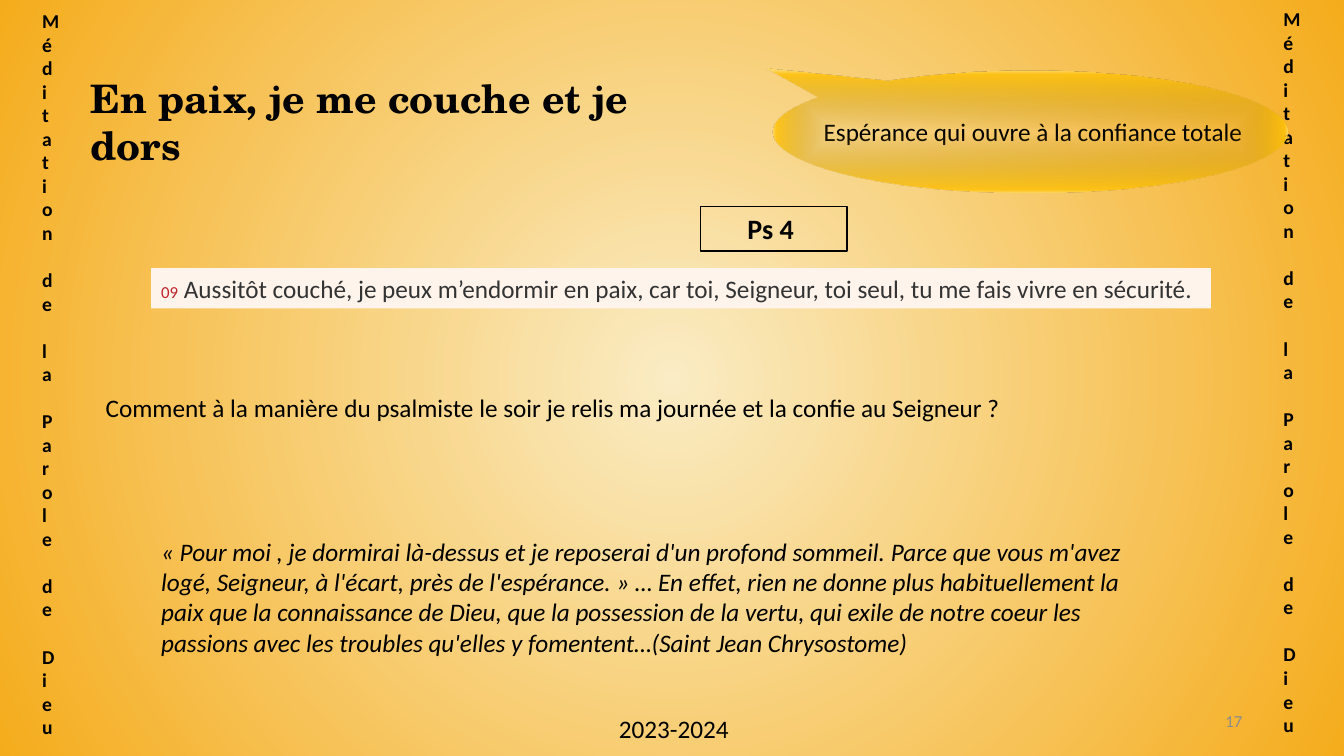
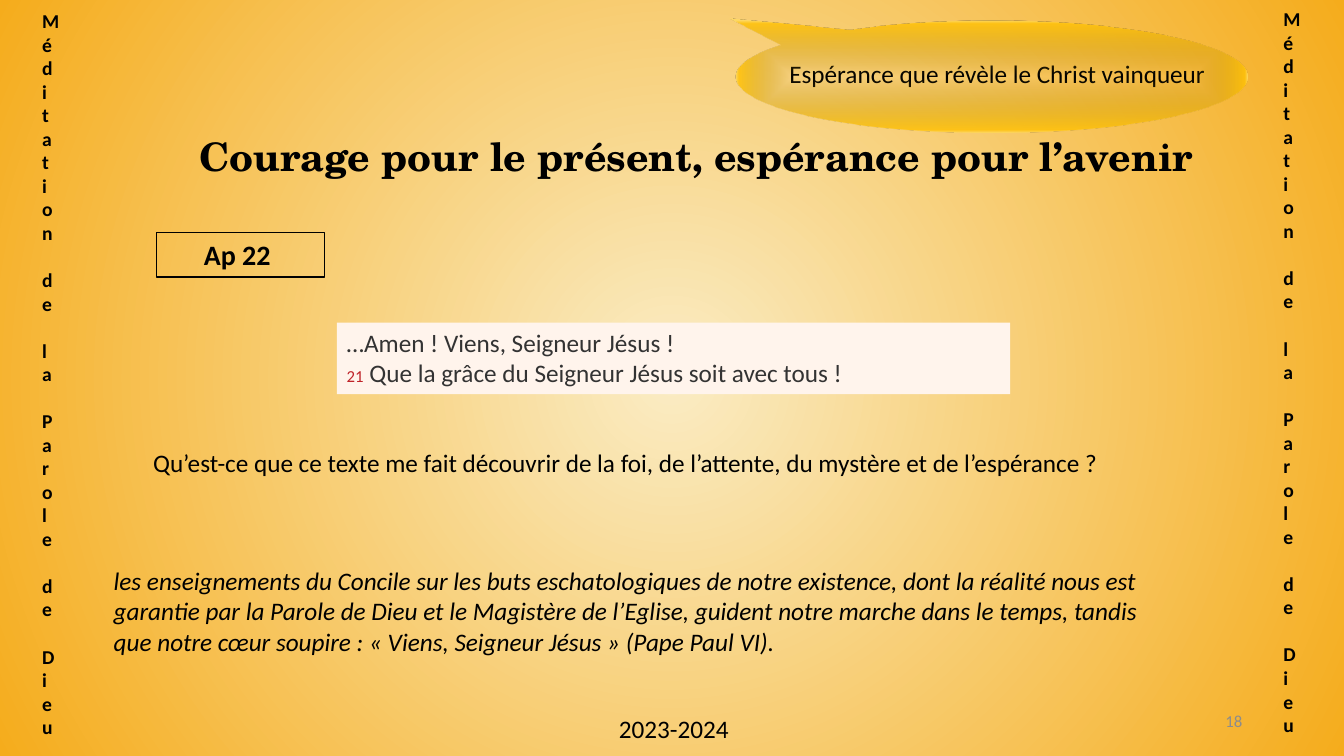
from dataclasses import dataclass

from lxml.etree import SubElement
from pptx import Presentation
from pptx.dml.color import RGBColor
from pptx.enum.shapes import MSO_SHAPE
from pptx.enum.text import MSO_ANCHOR, MSO_AUTO_SIZE, PP_ALIGN
from pptx.oxml.ns import qn
from pptx.util import Inches, Pt

COLORS = {
    "text": "000000", "verse": "333333", "number": "BF2329", "page": "8C8C8C",
    "verse_fill": "FFF4EC", "center": "FAECC4", "edge": "F5AC1C",
    "bubble_center": "AB8100", "bubble_gold": "FFC208", "bubble_edge": "FFD966",
}

# Each gradient stop: position in percent, colour, opacity in percent
PAGE_STOPS = [(0, "center", 100), (100, "edge", 100)]
BUBBLE_STOPS = [(0, "bubble_center", 0), (94, "bubble_gold", 85), (100, "bubble_edge", 100)]

# Font formats by role
FORMATS = {
    "title": {"name": "TeX Gyre Schola", "size": Pt(28), "bold": True},
    "band": {"name": "Calibri", "size": Pt(14), "bold": True},
    "reference": {"name": "Calibri", "size": Pt(20), "bold": True},
    "body": {"name": "Calibri", "size": Pt(18)},
    "quote": {"name": "Calibri", "size": Pt(18), "italic": True},
    "verse": {"name": "Calibri", "size": Pt(18)},
    "number": {"name": "Calibri", "size": Pt(12)},
    "page": {"name": "Calibri", "size": Pt(12)},
}

Area = tuple[float, float, float, float]
Spans = list[tuple[str, str]]  # (text, role)

BAND_TEXT = "Méditation de la Parole de Dieu"
BAND_AREAS = [(0.32, 0.04, 0.48, 7.42), (12.63, 0.02, 0.48, 7.42)]
YEAR_AREA = (6.04, 7.03, 1.34, 0.4)
NUMBER_AREA = (9.42, 6.95, 3, 0.4)


@dataclass
class TextBlock:
    area: Area
    paragraphs: list[Spans]
    align: PP_ALIGN = PP_ALIGN.LEFT
    wrap: bool = True
    anchor: MSO_ANCHOR = MSO_ANCHOR.TOP
    grow: bool = True
    fill: str | None = None
    line: str | None = None


@dataclass
class Meditation:
    number: int
    title: TextBlock
    blocks: list[TextBlock]
    bubble: Area


def block(area: Area, text: str, role: str, **options) -> TextBlock:
    return TextBlock(area, [[(text, role)]], **options)


def rgb(name: str) -> RGBColor:
    return RGBColor.from_string(COLORS[name])


def set_radial(fill, element, path: str, stops: list) -> None:
    """Give the element a gradient that spreads from its middle."""
    fill.gradient()
    gradient = element.find(".//" + qn("a:gradFill"))
    for child in list(gradient):
        gradient.remove(child)
    stop_list = SubElement(gradient, qn("a:gsLst"))
    for position, color, opacity in stops:
        stop = SubElement(stop_list, qn("a:gs"), pos=str(position * 1000))
        tint = SubElement(stop, qn("a:srgbClr"), val=COLORS[color])
        if opacity < 100:
            SubElement(tint, qn("a:alpha"), val=str(opacity * 1000))
    spread = SubElement(gradient, qn("a:path"), path=path)
    SubElement(spread, qn("a:fillToRect"), {side: "50000" for side in "ltrb"})


def place(box, area: Area) -> None:
    for name, value in zip(("left", "top", "width", "height"), area):
        setattr(box, name, Inches(value))


def write_text(box, content: TextBlock) -> None:
    frame = box.text_frame
    frame.word_wrap = content.wrap
    frame.auto_size = MSO_AUTO_SIZE.SHAPE_TO_FIT_TEXT if content.grow else MSO_AUTO_SIZE.NONE
    frame.vertical_anchor = content.anchor
    for index, spans in enumerate(content.paragraphs):
        para = frame.add_paragraph() if index else frame.paragraphs[0]
        para.alignment = content.align
        for text, role in spans:
            span = para.add_run()
            span.text = text
            for name, value in FORMATS[role].items():
                setattr(span.font, name, value)
            span.font.color.rgb = rgb(role if role in COLORS else "text")


def add_block(page, content: TextBlock):
    area = [Inches(value) for value in content.area]
    if content.fill or content.line:
        box = page.shapes.add_shape(MSO_SHAPE.RECTANGLE, *area)
        box.shadow.inherit = False
        if content.fill:
            box.fill.solid()
            box.fill.fore_color.rgb = rgb(content.fill)
        else:
            box.fill.background()
        if content.line:
            box.line.color.rgb = rgb(content.line)
            box.line.width = Pt(1)
        else:
            box.line.fill.background()
    else:
        box = page.shapes.add_textbox(*area)
    write_text(box, content)
    return box


def add_bubble(page, area: Area) -> None:
    bubble = page.shapes.add_shape(
        MSO_SHAPE.OVAL_CALLOUT, *[Inches(value) for value in area])
    bubble.adjustments[0] = -0.513
    bubble.adjustments[1] = -0.52
    bubble.shadow.inherit = False
    bubble.line.fill.background()
    set_radial(bubble.fill, bubble.element, "shape", BUBBLE_STOPS)


def add_bands(page) -> None:
    """Stacked lettering on both sides."""
    for area in BAND_AREAS:
        band = add_block(page, block(area, BAND_TEXT, "band", anchor=MSO_ANCHOR.MIDDLE))
        band.text_frame._txBody.bodyPr.set("vert", "wordArtVert")
        band.text_frame.paragraphs[0].runs[0].font._element.set("spc", "-300")


def build_page(deck, layout, meditation: Meditation) -> None:
    page = deck.slides.add_slide(layout)
    place(page.shapes.title, meditation.title.area)
    write_text(page.shapes.title, meditation.title)
    add_bands(page)
    add_block(page, block(YEAR_AREA, "2023-2024", "body"))
    for content in meditation.blocks:
        add_block(page, content)
    add_bubble(page, meditation.bubble)
    add_block(page, block(NUMBER_AREA, str(meditation.number), "page", align=PP_ALIGN.RIGHT,
                          anchor=MSO_ANCHOR.MIDDLE, grow=False))


MEDITATIONS = [
    Meditation(
        number=17,
        title=block((0.8, 0.69, 6.48, 0.57), "En paix, je me couche et je dors", "title"),
        blocks=[
            block((6.95, 2.05, 1.45, 0.44), "Ps 4 ", "reference",
                  align=PP_ALIGN.CENTER, line="text"),
            TextBlock(
                (1.5, 2.66, 10.51, 0.4),
                [[("09", "number"),
                  (" Aussitôt couché, je peux m’endormir en paix, car toi, Seigneur, "
                   "toi seul, tu me fais vivre en sécurité.", "verse")]],
                wrap=False, fill="verse_fill"),
            block((0.95, 3.84, 9.07, 0.4),
                  "Comment à la manière du psalmiste le soir je relis ma journée "
                  "et la confie au Seigneur ? ", "body", align=PP_ALIGN.JUSTIFY),
            block((1.5, 5.27, 9.86, 1.31),
                  "« Pour moi , je dormirai là-dessus et je reposerai d'un profond sommeil. "
                  "Parce que vous m'avez logé, Seigneur, à l'écart, près de l'espérance. » … "
                  "En effet, rien ne donne plus habituellement la paix que la connaissance "
                  "de Dieu, que la possession de la vertu, qui exile de notre coeur les "
                  "passions avec les troubles qu'elles y fomentent…(Saint Jean Chrysostome)",
                  "quote"),
            block((8.07, 1.11, 4.41, 0.4), "Espérance qui ouvre à la confiance totale",
                  "body", wrap=False),
        ],
        bubble=(7.67, 0.71, 5.1, 1.2),
    ),
    Meditation(
        number=18,
        title=block((0.8, 1.26, 12.21, 0.57),
                    "Courage pour le présent, espérance pour l’avenir", "title",
                    align=PP_ALIGN.CENTER),
        blocks=[
            block((1.55, 2.31, 1.67, 0.44), "Ap 22 ", "reference",
                  align=PP_ALIGN.CENTER, line="text"),
            TextBlock(
                (3.34, 3.2, 6.68, 0.71),
                [[("…Amen ! Viens, Seigneur Jésus !", "verse")],
                 [("21", "number"),
                  (" Que la grâce du Seigneur Jésus soit avec tous !", "verse")]],
                align=PP_ALIGN.JUSTIFY, fill="verse_fill"),
            block((1.42, 4.39, 10.17, 0.4),
                  "Qu’est-ce que ce texte me fait découvrir de la foi, de l’attente, "
                  "du mystère et de l’espérance ?", "body"),
            block((1.03, 5.56, 10.56, 1.01),
                  "les enseignements du Concile sur les buts eschatologiques de notre "
                  "existence, dont la réalité nous est garantie par la Parole de Dieu et le "
                  "Magistère de l’Eglise, guident notre marche dans le temps, tandis que "
                  "notre cœur soupire : « Viens, Seigneur Jésus » (Pape Paul VI).", "quote"),
            block((7.73, 0.53, 4.38, 0.4), "Espérance que révèle le Christ vainqueur",
                  "body", wrap=False),
        ],
        bubble=(7.3, 0.21, 5.07, 1.11),
    ),
]


def main() -> None:
    deck = Presentation()
    deck.slide_width = Inches(13.33)
    deck.slide_height = Inches(7.5)
    layout = deck.slide_layouts[5]  # title only
    set_radial(layout.background.fill, layout.element, "circle", PAGE_STOPS)
    for meditation in MEDITATIONS:
        build_page(deck, layout, meditation)
    deck.save("out.pptx")


if __name__ == "__main__":
    main()
